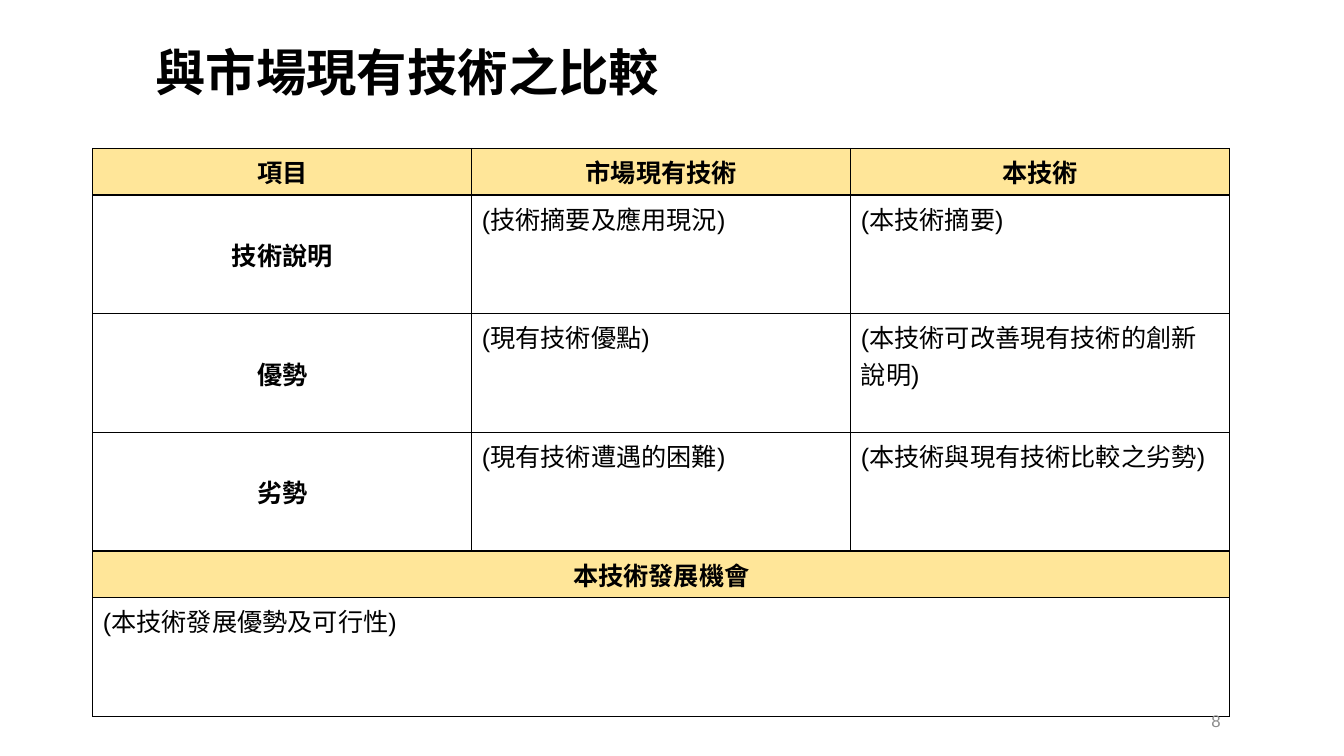
from lxml import etree
from pptx import Presentation
from pptx.dml.color import RGBColor
from pptx.enum.text import MSO_ANCHOR, MSO_AUTO_SIZE, PP_ALIGN
from pptx.oxml.ns import qn
from pptx.util import Cm, Pt

LEFT, CENTER, RIGHT = PP_ALIGN.LEFT, PP_ALIGN.CENTER, PP_ALIGN.RIGHT
TOP, MIDDLE = MSO_ANCHOR.TOP, MSO_ANCHOR.MIDDLE
TITLE_ONLY_LAYOUT = 5
BLACK, WHITE, YELLOW, GRAY = "000000", "FFFFFF", "FFE699", "8C8C8C"


def write_text(text_frame, text, size, color, bold, alignment):
    text_frame.text = text
    paragraph = text_frame.paragraphs[0]
    paragraph.alignment = alignment
    font = paragraph.runs[0].font
    font.name = "Arial"
    font.size = Pt(size)
    font.bold = bold
    font.color.rgb = RGBColor.from_string(color)


def add_borders(cell):
    properties = cell._tc.get_or_add_tcPr()
    for position, side in enumerate(("lnL", "lnR", "lnT", "lnB")):
        line = etree.Element(qn("a:" + side), w=str(Pt(1)))
        fill = etree.SubElement(line, qn("a:solidFill"))
        etree.SubElement(fill, qn("a:srgbClr"), val=BLACK)
        properties.insert(position, line)


presentation = Presentation()
presentation.slide_width = Cm(33.87)
presentation.slide_height = Cm(19.05)
slide = presentation.slides.add_slide(presentation.slide_layouts[TITLE_ONLY_LAYOUT])

# Title
title = slide.shapes.title
title.left, title.top, title.width, title.height = Cm(3.66), Cm(0.05), Cm(27.89), Cm(3.68)
title.text_frame.auto_size = MSO_AUTO_SIZE.NONE
title.text_frame.vertical_anchor = MIDDLE
write_text(title.text_frame, "與市場現有技術之比較", 36, BLACK, True, LEFT)
title.text_frame.paragraphs[0].line_spacing = 0.9

# Comparison table: one text in a row means the row is merged across
rows = [
    ("項目", "市場現有技術", "本技術"),
    ("技術說明", "(技術摘要及應用現況)", "(本技術摘要)"),
    ("優勢", "(現有技術優點)", "(本技術可改善現有技術的創新說明)"),
    ("劣勢", "(現有技術遭遇的困難)", "(本技術與現有技術比較之劣勢)"),
    ("本技術發展機會",),
    ("(本技術發展優勢及可行性)",),
]
heading_rows = (0, 4)
heading_height, content_height = Cm(1.07), Cm(2.99)
table = slide.shapes.add_table(
    len(rows), 3, Cm(2.34), Cm(3.74), Cm(28.65), Cm(14.1)).table
for column in table.columns:
    column.width = Cm(9.55)

for row_index, texts in enumerate(rows):
    is_heading = row_index in heading_rows
    table.rows[row_index].height = heading_height if is_heading else content_height
    if len(texts) == 1:
        table.cell(row_index, 0).merge(table.cell(row_index, 2))
    for column_index in range(3):
        cell = table.cell(row_index, column_index)
        cell.fill.solid()
        cell.fill.fore_color.rgb = RGBColor.from_string(YELLOW if is_heading else WHITE)
        add_borders(cell)
        if column_index < len(texts):
            text = texts[column_index]
            is_label = not text.startswith("(")
            cell.vertical_anchor = MIDDLE if is_label else TOP
            write_text(cell.text_frame, text, 18, BLACK, is_label,
                       CENTER if is_label else LEFT)

# Page number
page_number = slide.shapes.add_textbox(Cm(23.92), Cm(17.65), Cm(7.09), Cm(1.02))
page_number.text_frame.word_wrap = True
page_number.text_frame.vertical_anchor = MIDDLE
write_text(page_number.text_frame, "8", 12, GRAY, False, RIGHT)

presentation.save("out.pptx")
